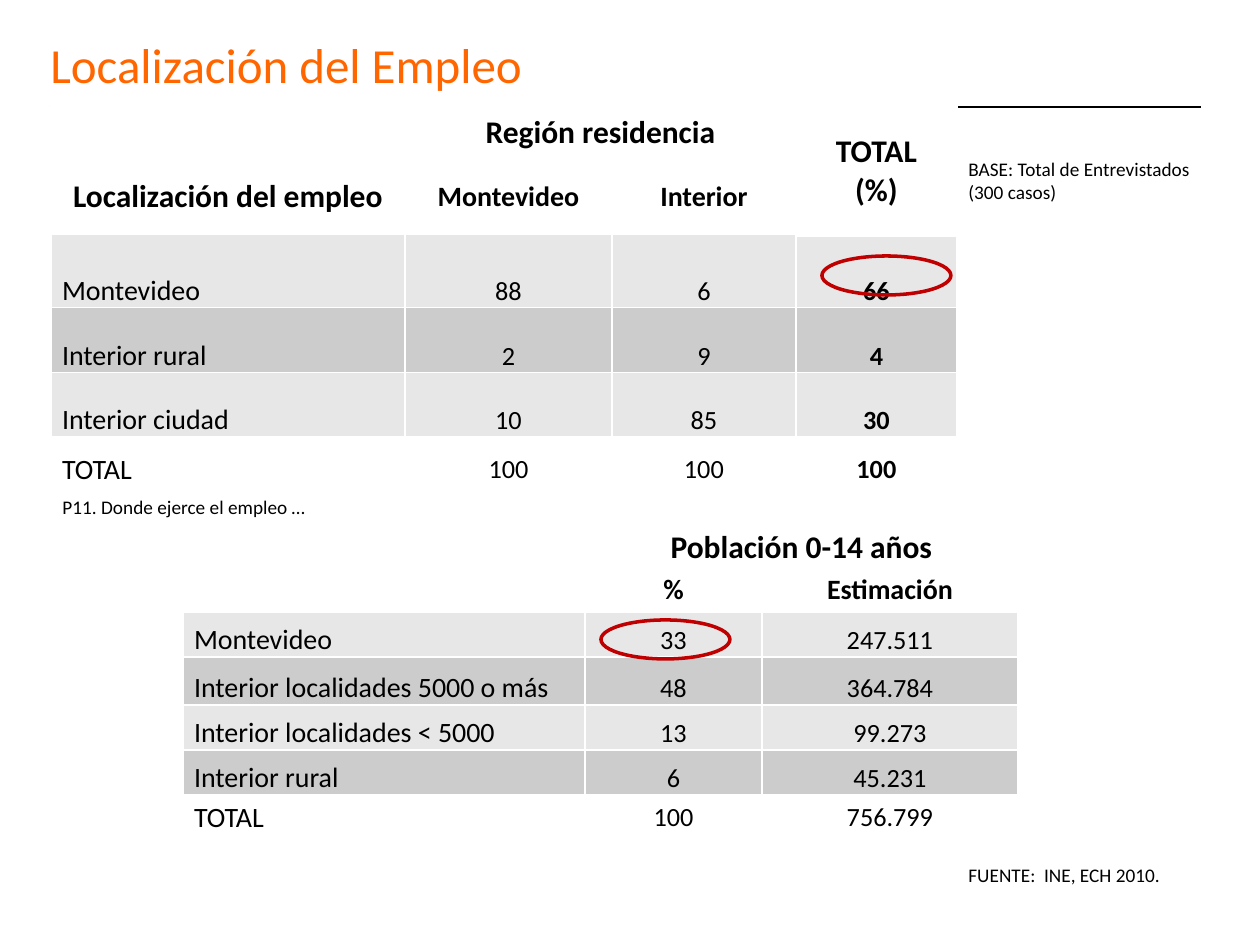
"""Build the slide on job location with its two survey tables."""
from dataclasses import dataclass

from lxml.etree import SubElement
from pptx import Presentation
from pptx.dml.color import RGBColor
from pptx.enum.shapes import MSO_CONNECTOR, MSO_SHAPE
from pptx.enum.text import MSO_ANCHOR, PP_ALIGN
from pptx.oxml.ns import qn
from pptx.util import Emu, Pt

PX_PER_INCH = 126
FONT = "Calibri"
BLACK = RGBColor(0x00, 0x00, 0x00)
WHITE = RGBColor(0xFF, 0xFF, 0xFF)
ORANGE = RGBColor(0xFF, 0x66, 0x00)
RED = RGBColor(0xC0, 0x00, 0x00)
LIGHT = RGBColor(0xE7, 0xE7, 0xE7)
DARK = RGBColor(0xCC, 0xCC, 0xCC)


@dataclass(frozen=True)
class Label:
    text: str
    left: int
    top: int
    width: int
    height: int
    size: int = 11
    color: RGBColor = BLACK
    anchor: MSO_ANCHOR = MSO_ANCHOR.TOP


@dataclass(frozen=True)
class Row:
    height: int
    texts: tuple[str, ...]
    fill: RGBColor | None = None
    sizes: tuple[int, ...] = (16, 15, 15, 15)
    header: bool = False


@dataclass(frozen=True)
class Grid:
    left: int
    top: int
    widths: tuple[int, ...]
    rows: tuple[Row, ...]
    merges: tuple[tuple[int, int, int, int], ...]
    bold_column: int | None = None


@dataclass(frozen=True)
class Ring:
    left: int
    top: int
    width: int = 129
    height: int = 39


TITLE = Label("Localización del Empleo", 38, 20, 799, 87, 28, ORANGE, MSO_ANCHOR.MIDDLE)
BASE = Label("BASE: Total de Entrevistados (300 casos)", 956, 151, 276, 59)
SOURCE = Label("FUENTE:  INE, ECH 2010.", 956, 857, 276, 37)
QUESTION = Label("P11. Donde ejerce el empleo …", 50, 489, 384, 38)

EMPLOYMENT = Grid(
    51, 107, (354, 207, 184, 161),
    (
        Row(51, ("", "Región residencia", "", "TOTAL\n(%)"), sizes=(18,) * 4, header=True),
        Row(76, ("Localización del empleo", "Montevideo", "Interior", ""),
            sizes=(18, 16, 16, 16), header=True),
        Row(73, ("Montevideo", "88", "6", "66"), LIGHT),
        Row(65, ("Interior rural", "2", "9", "4"), DARK),
        Row(64, ("Interior ciudad", "10", "85", "30"), LIGHT),
        Row(65, ("TOTAL", "100", "100", "100")),
    ),
    ((0, 1, 0, 2), (0, 3, 1, 3)),
    bold_column=3,
)
POPULATION = Grid(
    183, 527, (402, 177, 256),
    (
        Row(40, ("", "Población 0-14 años", ""), sizes=(18,) * 3, header=True),
        Row(45, ("", "%", "Estimación"), sizes=(16,) * 3, header=True),
        Row(45, ("Montevideo", "33", "247.511"), LIGHT),
        Row(48, ("Interior localidades 5000 o más", "48", "364.784"), DARK),
        Row(45, ("Interior localidades < 5000", "13", "99.273"), LIGHT),
        Row(45, ("Interior rural", "6", "45.231"), DARK),
        Row(45, ("TOTAL", "100", "756.799")),
        Row(45, ("", "", "")),
    ),
    ((0, 1, 0, 2),),
)


def px(length: int) -> Emu:
    """Turn pixels into EMU."""
    return Emu(round(length * 914400 / PX_PER_INCH))


def add_run(paragraph, text: str, size: int, color: RGBColor = BLACK, bold: bool = False) -> None:
    """Append a formatted run."""
    run = paragraph.add_run()
    run.text = text
    run.font.name = FONT
    run.font.size = Pt(size)
    run.font.bold = bold
    run.font.color.rgb = color


def add_label(slide, label: Label) -> None:
    """Draw a text box."""
    box = slide.shapes.add_textbox(px(label.left), px(label.top), px(label.width), px(label.height))
    frame = box.text_frame
    frame.word_wrap = True
    frame.vertical_anchor = label.anchor
    add_run(frame.paragraphs[0], label.text, label.size, label.color)


def add_rule(slide, left: int, right: int, y: int) -> None:
    """Draw the thin line below the title."""
    rule = slide.shapes.add_connector(MSO_CONNECTOR.STRAIGHT, px(left), px(y), px(right), px(y))
    rule.line.color.rgb = BLACK
    rule.line.width = Pt(0.75)
    SubElement(rule._element.spPr, qn("a:effectLst"))


def add_ring(slide, ring: Ring) -> None:
    """Draw a red ellipse around a figure."""
    ellipse = slide.shapes.add_shape(
        MSO_SHAPE.OVAL, px(ring.left), px(ring.top), px(ring.width), px(ring.height))
    ellipse.shadow.inherit = False
    ellipse.fill.background()
    ellipse.line.color.rgb = RED
    ellipse.line.width = Pt(2)


def set_borders(cell, bottom: int) -> None:
    """Give a cell white borders."""
    properties = cell._tc.get_or_add_tcPr()
    for side, width in (("L", 1), ("R", 1), ("T", 1), ("B", bottom)):
        border = SubElement(properties, qn(f"a:ln{side}"), w=str(Pt(width)))
        SubElement(SubElement(border, qn("a:solidFill")), qn("a:srgbClr"), val=str(WHITE))


def fill_cell(cell, row: Row, column: int, bold: bool, bottom: int) -> None:
    """Format one table cell and write its text."""
    set_borders(cell, bottom)
    if row.fill is None:
        cell.fill.background()
    else:
        cell.fill.solid()
        cell.fill.fore_color.rgb = row.fill
    cell.margin_left = cell.margin_right = cell.margin_top = px(1)
    cell.margin_bottom = 0
    cell.vertical_anchor = MSO_ANCHOR.MIDDLE if row.fill is None else MSO_ANCHOR.BOTTOM
    if not row.texts[column]:
        return
    for index, line in enumerate(row.texts[column].split("\n")):
        frame = cell.text_frame
        paragraph = frame.add_paragraph() if index else frame.paragraphs[0]
        if column or row.header:
            paragraph.alignment = PP_ALIGN.CENTER
        else:
            paragraph._p.get_or_add_pPr().set("marL", str(px(10)))
        add_run(paragraph, line, row.sizes[column], bold=bold)


def add_grid(slide, grid: Grid) -> None:
    """Draw a table."""
    height = sum(row.height for row in grid.rows)
    table = slide.shapes.add_table(
        len(grid.rows), len(grid.widths), px(grid.left), px(grid.top),
        px(sum(grid.widths)), px(height)).table
    table.first_row = table.horz_banding = False
    for column, width in zip(table.columns, grid.widths):
        column.width = px(width)
    for top, left, bottom, right in grid.merges:
        table.cell(top, left).merge(table.cell(bottom, right))
    for r, row in enumerate(grid.rows):
        table.rows[r].height = px(row.height)
        for c in range(len(grid.widths)):
            bold = row.header or c == grid.bold_column
            fill_cell(table.cell(r, c), row, c, bold, 1 if r else 3)


def main() -> None:
    """Build and save the slide."""
    deck = Presentation()
    deck.slide_width, deck.slide_height = px(1260), px(945)
    slide = deck.slides.add_slide(deck.slide_layouts[6])
    add_label(slide, BASE)
    add_rule(slide, 50, 1201, 107)
    add_grid(slide, EMPLOYMENT)
    add_ring(slide, Ring(822, 256))
    add_grid(slide, POPULATION)
    add_ring(slide, Ring(601, 620))
    for label in (SOURCE, TITLE, QUESTION):
        add_label(slide, label)
    deck.save("out.pptx")


if __name__ == "__main__":
    main()
